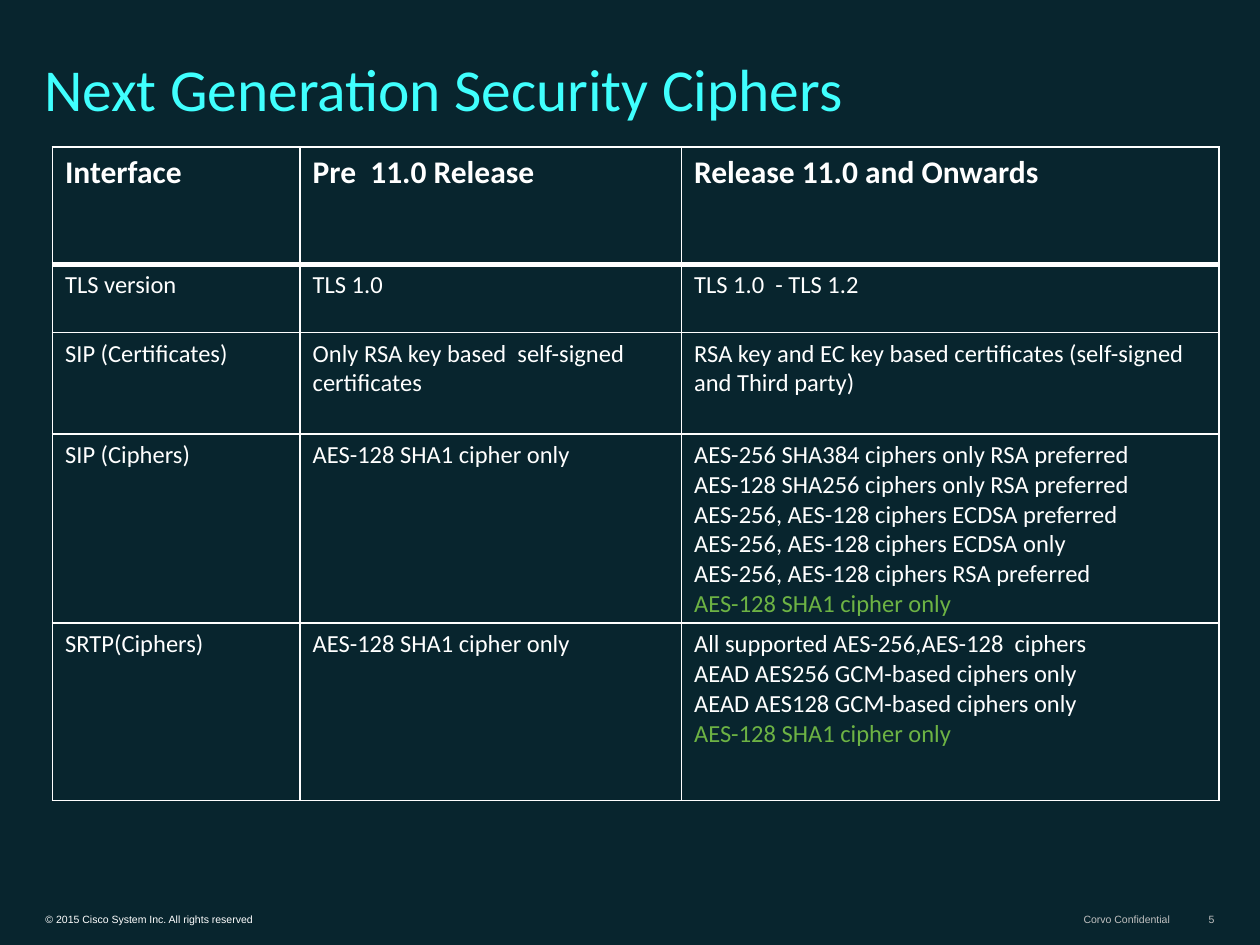
"""Build the slide on next generation security ciphers."""
import dataclasses

import lxml.etree
import pptx
import pptx.dml.color
import pptx.enum.text
import pptx.oxml.ns
import pptx.util

Pt = pptx.util.Pt
ALIGN = pptx.enum.text.PP_ALIGN
ANCHOR = pptx.enum.text.MSO_ANCHOR
FIT = pptx.enum.text.MSO_AUTO_SIZE


@dataclasses.dataclass(frozen=True)
class Theme:
    """Colours, fonts, type sizes and line widths in points."""
    background: str = "08252E"
    title: str = "40FFFE"
    text: str = "FFFFFF"
    muted: str = "C0C0C0"
    accent: str = "6DB344"
    main_font: str = "Calibri"
    footer_font: str = "Arial"
    title_size: float = 34
    header_size: float = 18
    body_size: float = 14
    footer_size: float = 6
    thin: float = 1
    thick: float = 3


class SlideBuilder:
    """Hold the theme and the current slide, and add elements to it."""

    def __init__(self, deck, theme):
        """Start a title-only slide on the theme background."""
        self.theme = theme
        self.page = deck.slides.add_slide(deck.slide_layouts[5])
        fill = self.page.background.fill
        fill.solid()
        fill.fore_color.rgb = pptx.dml.color.RGBColor.from_string(theme.background)

    def apply(self, target, values):
        """Set every attribute named in the dict of values."""
        for name, value in values.items():
            setattr(target, name, value)

    def add_span(self, para, text, color, size, font, bold=False):
        """Fill a paragraph with one formatted run."""
        span = para.add_run()
        span.text = text
        self.apply(span.font, {"name": font, "size": Pt(size), "bold": bold})
        span.font.color.rgb = pptx.dml.color.RGBColor.from_string(color)

    def place(self, box, left, top, width, height):
        """Move and size a box."""
        self.apply(box, {"left": Pt(left), "top": Pt(top),
                         "width": Pt(width), "height": Pt(height)})

    def title(self, text, bounds):
        """Format the title placeholder."""
        box = self.page.shapes.title
        self.place(box, *bounds)
        self.apply(box.text_frame, {"vertical_anchor": ANCHOR.BOTTOM, "word_wrap": True,
                                    "auto_size": FIT.NONE})
        para = box.text_frame.paragraphs[0]
        self.apply(para, {"alignment": ALIGN.LEFT, "line_spacing": 0.8})
        self.add_span(para, text, self.theme.title, self.theme.title_size, self.theme.main_font)

    def footer(self, text, bounds, color, align, wrap):
        """Add one small footer text."""
        box = self.page.shapes.add_textbox(*map(Pt, bounds))
        self.apply(box.text_frame, {
            "vertical_anchor": ANCHOR.BOTTOM, "word_wrap": wrap,
            "auto_size": FIT.SHAPE_TO_FIT_TEXT, "margin_left": Pt(6.5),
            "margin_right": Pt(6.5), "margin_top": Pt(3), "margin_bottom": Pt(3)})
        para = box.text_frame.paragraphs[0]
        para.alignment = align
        self.add_span(para, text, color, self.theme.footer_size, self.theme.footer_font)

    def borders(self, cell, widths):
        """Draw solid cell borders from a dict of side to width."""
        properties = cell._tc.get_or_add_tcPr()
        tag = pptx.oxml.ns.qn
        for side, width in widths.items():
            line = lxml.etree.SubElement(properties, tag(f"a:ln{side}"), w=str(Pt(width)))
            fill = lxml.etree.SubElement(line, tag("a:solidFill"))
            lxml.etree.SubElement(fill, tag("a:srgbClr"), val=self.theme.text)

    def table(self, rows, left, top, widths, heights):
        """Add a ruled table; a leading '*' marks an accented line."""
        theme = self.theme
        frame = self.page.shapes.add_table(len(rows), len(widths), Pt(left), Pt(top),
                                           Pt(sum(widths)), Pt(sum(heights)))
        grid = frame.table
        self.apply(grid, {"first_row": False, "horz_banding": False})
        for column, width in zip(grid.columns, widths):
            column.width = Pt(width)
        for index, (row, height, texts) in enumerate(zip(grid.rows, heights, rows)):
            row.height = Pt(height)
            header = index == 0
            size = theme.header_size if header else theme.body_size
            sides = {"L": theme.thin, "R": theme.thin,
                     "T": theme.thick if index == 1 else theme.thin,
                     "B": theme.thick if header else theme.thin}
            for cell, text in zip(row.cells, texts):
                self.borders(cell, sides)
                cell.fill.background()
                for number, line in enumerate(text.split("\n")):
                    body = cell.text_frame
                    para = body.add_paragraph() if number else body.paragraphs[0]
                    color = theme.accent if line.startswith("*") else theme.text
                    self.add_span(para, line.lstrip("*"), color, size, theme.main_font, header)


ROWS = [
    ("Interface", "Pre  11.0 Release", "Release 11.0 and Onwards"),
    ("TLS version", "TLS 1.0", "TLS 1.0  - TLS 1.2"),
    ("SIP (Certificates)", "Only RSA key based  self-signed certificates",
     "RSA key and EC key based certificates (self-signed and Third party)"),
    ("SIP (Ciphers)", "AES-128 SHA1 cipher only",
     "AES-256 SHA384 ciphers only RSA preferred\n"
     "AES-128 SHA256 ciphers only RSA preferred\n"
     "AES-256, AES-128 ciphers ECDSA preferred\n"
     "AES-256, AES-128 ciphers ECDSA only\n"
     "AES-256, AES-128 ciphers RSA preferred\n"
     "*AES-128 SHA1 cipher only"),
    ("SRTP(Ciphers)", "AES-128 SHA1 cipher only",
     "All supported AES-256,AES-128  ciphers\n"
     "AEAD AES256 GCM-based ciphers only\n"
     "AEAD AES128 GCM-based ciphers only\n"
     "*AES-128 SHA1 cipher only"),
]


def main():
    """Create the deck and save it."""
    deck = pptx.Presentation()
    deck.slide_width, deck.slide_height = Pt(720), Pt(540)
    theme = Theme()
    builder = SlideBuilder(deck, theme)
    builder.footer("© 2015 Cisco System Inc. All rights reserved", (19.5, 518.5, 269, 13.5),
                   theme.text, ALIGN.LEFT, True)
    builder.footer("Corvo Confidential", (611, 518.5, 64, 13.5), theme.muted, ALIGN.RIGHT, False)
    builder.footer("5", (680.5, 518.5, 20, 13.5), theme.muted, ALIGN.RIGHT, False)
    builder.title("Next Generation Security Ciphers", (18, 18, 676, 56))
    builder.table(ROWS, 30, 84, (141.5, 218, 307), (67, 39, 58, 106.5, 101.5))
    deck.save("out.pptx")


if __name__ == "__main__":
    main()
